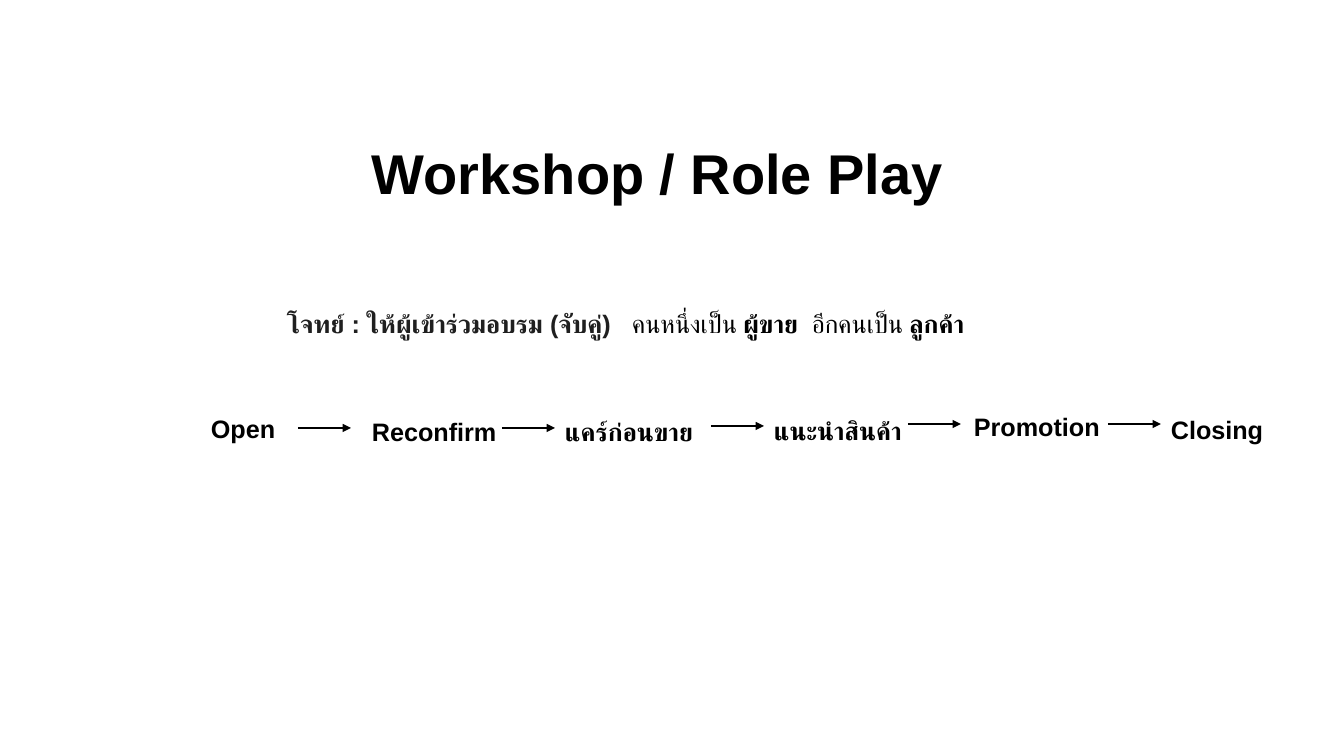
from lxml import etree
from pptx import Presentation
from pptx import util as u
from pptx.dml.color import RGBColor
from pptx.enum import shapes, text
from pptx.oxml import ns

SCALE = 914400 / 100.8
COLORS = {"ink": "000000", "task": "1F1F1F"}
STEP_WIDTH, STEP_HEIGHT, ARROW_LENGTH = 160, 40, 53

STEPS = [
    ("Open", 0, 2),
    ("Reconfirm", 161, 5),
    ("แคร์ก่อนขาย", 354, 5),
    ("แนะนำสินค้า", 563, 4),
    ("Promotion", 763, 0),
    ("Closing", 960, 3),
]
ARROWS = [(97, 22), (301, 22), (510, 20), (707, 18), (907, 18)]
TASK_SPANS = [
    ("โจทย์ : ให้ผู้เข้าร่วมอบรม (จับคู่)\t", True, "task"),
    ("คนหนึ่งเป็น ", False, "ink"),
    ("ผู้ขาย\t", True, "ink"),
    ("อีกคนเป็น ", False, "ink"),
    ("ลูกค้า", True, "ink"),
]
TASK_TABS = [345, 525]


def px(length):
    return u.Emu(round(length * SCALE))


def add_text(page, box, spans, size):
    label = page.shapes.add_textbox(*map(px, box))
    frame = label.text_frame
    frame.word_wrap = True
    frame.auto_size = text.MSO_AUTO_SIZE.SHAPE_TO_FIT_TEXT
    para = frame.paragraphs[0]
    for words, bold, color in spans:
        span = para.add_run()
        span.text = words
        span.font.name = "Arial"
        span.font.size = u.Pt(size)
        span.font.bold = bold
        span.font.color.rgb = RGBColor.from_string(COLORS[color])
    return para


def add_arrow(page, left, top):
    arrow = page.shapes.add_connector(
        shapes.MSO_CONNECTOR.STRAIGHT,
        px(left), px(top), px(left + ARROW_LENGTH), px(top))
    arrow.line.color.rgb = RGBColor.from_string(COLORS["ink"])
    arrow.line.width = u.Pt(1.5)
    outline = arrow.line._get_or_add_ln()
    etree.SubElement(outline, ns.qn("a:tailEnd"), type="triangle")
    etree.SubElement(arrow._element.spPr, ns.qn("a:effectLst"))


def add_title(page, box):
    add_text(page, box, [("Workshop / Role Play", True, "ink")], 40)


def add_task(page, box):
    para = add_text(page, box, TASK_SPANS, 18)
    stops = etree.SubElement(para._p.get_or_add_pPr(), ns.qn("a:tabLst"))
    for stop in TASK_TABS:
        etree.SubElement(stops, ns.qn("a:tab"), pos=str(px(stop)), algn="l")


def add_sales_flow(page, box):
    left, top, width, height = box
    for name, x, y in STEPS:
        step_width = min(STEP_WIDTH, width - x)
        add_text(page, (left + x, top + y, step_width, STEP_HEIGHT),
                 [(name, True, "ink")], 18)
    for x, y in ARROWS:
        add_arrow(page, left + x, top + y)


def main():
    deck = Presentation()
    deck.slide_width, deck.slide_height = px(1344), px(756)
    page = deck.slides.add_slide(deck.slide_layouts[6])
    add_title(page, (362, 134, 672, 78))
    add_task(page, (277, 303, 1067, 72))
    add_sales_flow(page, (201, 406, 1143, 45))
    deck.save("out.pptx")


if __name__ == "__main__":
    main()
